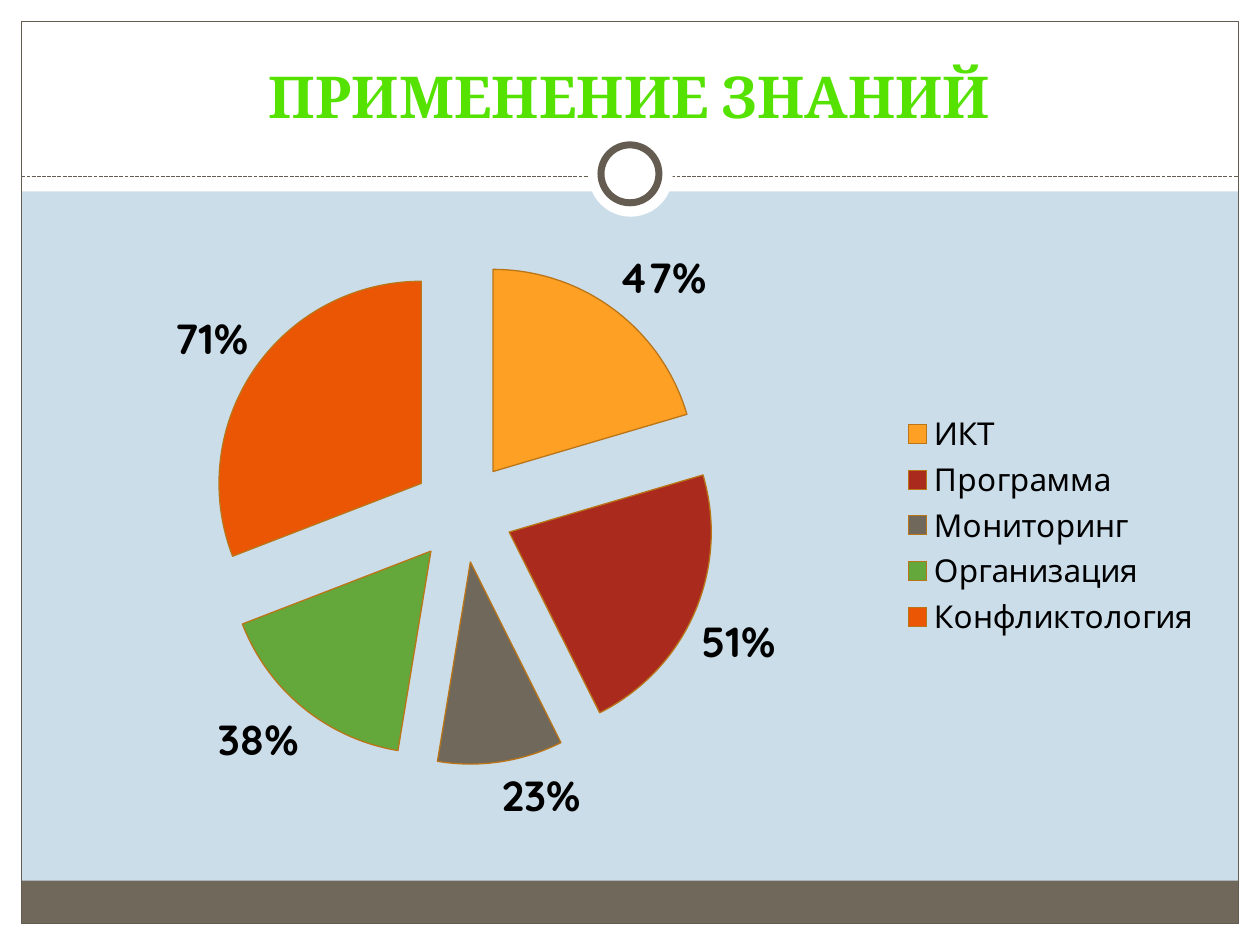
import pptx
import pptx.chart.data
import pptx.dml.color
import pptx.enum.chart
import pptx.enum.dml
import pptx.enum.shapes
import pptx.enum.text
import pptx.oxml
import pptx.util
from pptx.util import Inches, Pt

RGBColor = pptx.dml.color.RGBColor
SHAPE = pptx.enum.shapes.MSO_SHAPE

WHITE = RGBColor(0xFF, 0xFF, 0xFF)
BLACK = RGBColor(0x00, 0x00, 0x00)
SKY = RGBColor(0xCC, 0xDD, 0xEA)
TAUPE = RGBColor(0x71, 0x68, 0x5C)
DARK_TAUPE = RGBColor(0x64, 0x5C, 0x51)
LIME = RGBColor(0x56, 0xE2, 0x00)
OCHRE = RGBColor(0xBA, 0x75, 0x18)
ORANGE = RGBColor(0xFD, 0xA0, 0x23)
RED = RGBColor(0xAA, 0x2B, 0x1E)
GREEN = RGBColor(0x64, 0xA7, 0x3B)
VERMILION = RGBColor(0xEB, 0x56, 0x05)

# Content
TITLE = "ПРИМЕНЕНИЕ ЗНАНИЙ"
SLICES = [
    ("ИКТ", 0.47, ORANGE),
    ("Программа", 0.51, RED),
    ("Мониторинг", 0.23, TAUPE),
    ("Организация", 0.38, GREEN),
    ("Конфликтология", 0.71, VERMILION),
]

# Frame: preset, (left, top, width, height), fill, line colour, line width
WIDTH, HEIGHT, MARGIN = 10, 7.5, 0.17
INNER = WIDTH - 2 * MARGIN
RULE_TOP = 1.4
FRAME = [
    (SHAPE.RECTANGLE, (0, HEIGHT - MARGIN, WIDTH, MARGIN), WHITE, None, 0),
    (SHAPE.RECTANGLE, (0, 0, WIDTH, 1.52), WHITE, None, 0),
    (SHAPE.RECTANGLE, (0, 0, MARGIN, HEIGHT), WHITE, None, 0),
    (SHAPE.RECTANGLE, (WIDTH - MARGIN, 0, MARGIN, HEIGHT), WHITE, None, 0),
    (SHAPE.RECTANGLE, (MARGIN, 6.99, INNER, 0.34), TAUPE, None, 0),
    (SHAPE.RECTANGLE, (MARGIN, MARGIN, INNER, HEIGHT - 2 * MARGIN), None, DARK_TAUPE, 0.75),
]
RINGS = [
    (SHAPE.OVAL, (4.67, 1.05, 0.67, 0.67), WHITE, None, 0),
    (SHAPE.OVAL, (4.77, 1.15, 0.46, 0.46), WHITE, DARK_TAUPE, 4),
]


def add_shapes(page, parts):
    for preset, place, fill, line, weight in parts:
        shape = page.shapes.add_shape(preset, *map(Inches, place))
        shape.shadow.inherit = False
        if fill is None:
            shape.fill.background()
        else:
            shape.fill.solid()
            shape.fill.fore_color.rgb = fill
        if line is None:
            shape.line.fill.background()
        else:
            shape.line.color.rgb = line
            shape.line.width = Pt(weight)


def add_rule(page):
    rule = page.shapes.add_connector(
        pptx.enum.shapes.MSO_CONNECTOR.STRAIGHT,
        Inches(MARGIN), Inches(RULE_TOP), Inches(WIDTH - MARGIN), Inches(RULE_TOP))
    rule.line.color.rgb = DARK_TAUPE
    rule.line.width = Pt(0.75)
    rule.line.dash_style = pptx.enum.dml.MSO_LINE.SQUARE_DOT
    properties = rule.element.spPr
    properties.append(pptx.oxml.parse_xml(
        '<a:effectLst xmlns:a="http://schemas.openxmlformats.org/drawingml/2006/main"/>'))


def set_title(page):
    title = page.shapes.title
    title.left, title.top, title.width, title.height = map(Inches, (0.33, 0.25, 9.33, 0.83))
    title.text_frame.text = TITLE
    title.text_frame.vertical_anchor = pptx.enum.text.MSO_ANCHOR.BOTTOM
    para = title.text_frame.paragraphs[0]
    para.alignment = pptx.enum.text.PP_ALIGN.CENTER
    para.font.name, para.font.size, para.font.bold = "Cambria", Pt(33), True
    para.font.color.rgb = LIME
    # Bring the title in front of the white header band
    title.element.getparent().append(title.element)


def add_pie(page):
    data = pptx.chart.data.CategoryChartData(number_format="0%")
    data.categories = [name for name, _, _ in SLICES]
    data.add_series("Series 1", [value for _, value, _ in SLICES])
    chart = page.shapes.add_chart(
        pptx.enum.chart.XL_CHART_TYPE.PIE_EXPLODED,
        *map(Inches, (0.33, 1.67, 9.3, 5)), data).chart
    chart.has_title = False
    chart.font.name, chart.font.size = "Quicksand", Pt(18)
    chart.font.color.rgb = BLACK
    chart.has_legend = True
    chart.legend.position = pptx.enum.chart.XL_LEGEND_POSITION.RIGHT
    chart.legend.include_in_layout = False

    plot = chart.plots[0]
    plot.vary_by_categories = True
    for index, (_, _, colour) in enumerate(SLICES):
        slice_format = plot.series[0].points[index].format
        slice_format.fill.solid()
        slice_format.fill.fore_color.rgb = colour
        slice_format.line.color.rgb = OCHRE
        slice_format.line.width = Pt(0.75)

    plot.has_data_labels = True
    labels = plot.data_labels
    labels.show_value = True
    labels.show_percentage = False
    labels.number_format, labels.number_format_is_linked = "0%", False
    labels.position = pptx.enum.chart.XL_LABEL_POSITION.OUTSIDE_END
    labels.font.name, labels.font.size, labels.font.bold = "Quicksand", Pt(24), True
    labels.font.color.rgb = BLACK


def main():
    deck = pptx.Presentation()
    deck.slide_width, deck.slide_height = Inches(WIDTH), Inches(HEIGHT)
    page = deck.slides.add_slide(deck.slide_layouts[5])
    page.background.fill.solid()
    page.background.fill.fore_color.rgb = SKY
    add_shapes(page, FRAME)
    add_rule(page)
    add_shapes(page, RINGS)
    set_title(page)
    add_pie(page)
    deck.save("out.pptx")


if __name__ == "__main__":
    main()
